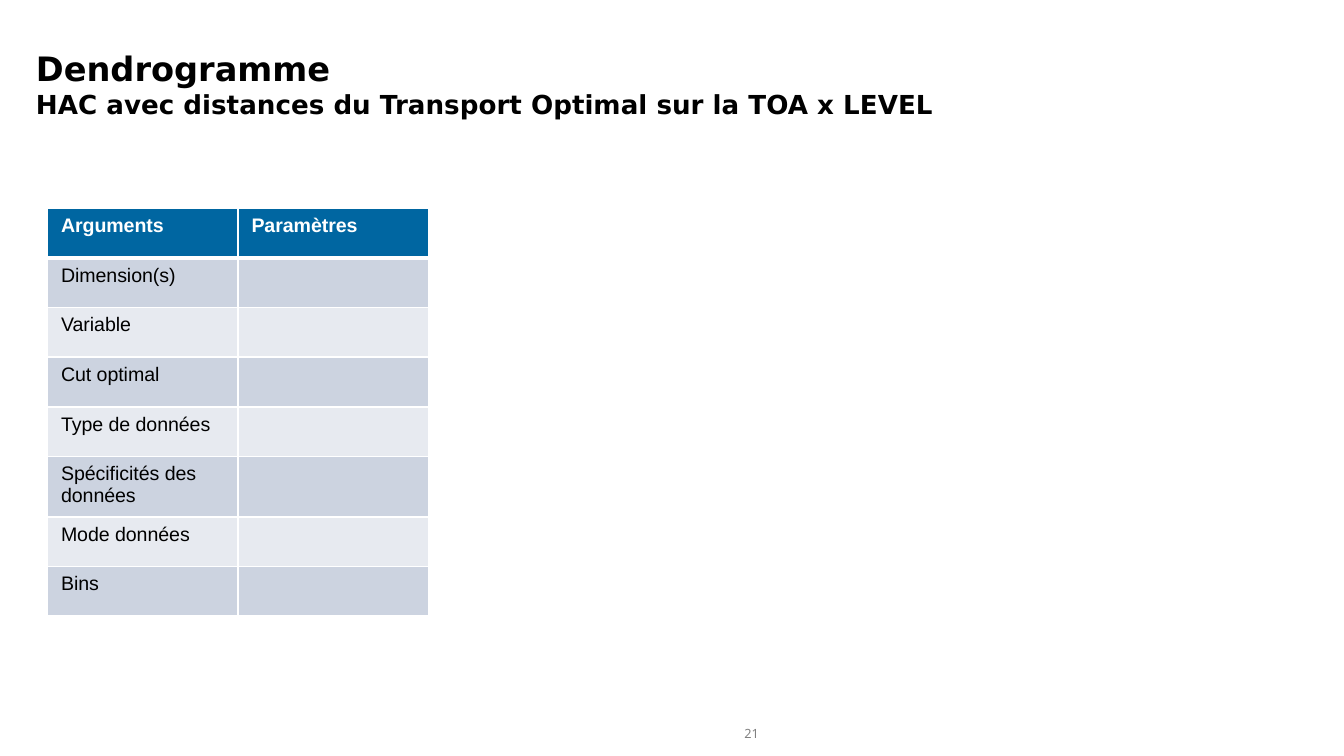
from lxml.etree import SubElement
from pptx import Presentation
from pptx.dml.color import RGBColor
from pptx.enum.text import MSO_ANCHOR, PP_ALIGN
from pptx.oxml.ns import qn
from pptx.util import Cm, Pt

BLACK = RGBColor(0x00, 0x00, 0x00)
WHITE = RGBColor(0xFF, 0xFF, 0xFF)
GREY = RGBColor(0x81, 0x81, 0x81)
BLUE = RGBColor(0x00, 0x66, 0xA1)
DARK_BAND = RGBColor(0xCC, 0xD3, 0xE0)
LIGHT_BAND = RGBColor(0xE7, 0xEA, 0xF0)

TITLE = {"name": "DejaVu Sans", "size": Pt(18), "bold": True}
SUBTITLE = {**TITLE, "size": Pt(14)}
BODY = {"name": "Arial", "size": Pt(10.5), "bold": False}
HEADER = {**BODY, "bold": True}
NUMBER = {"name": "Noto Sans", "size": Pt(6.8), "bold": False}

ARGUMENTS = [
    "Dimension(s)",
    "Variable",
    "Cut optimal",
    "Type de données",
    "Spécificités des données",
    "Mode données",
    "Bins",
]


def write(para, text, style, color):
    if text:
        para.add_run().text = text
    for font in [para.font] + [span.font for span in para.runs]:
        for key, value in style.items():
            setattr(font, key, value)
        font.color.rgb = color


def add_frame(page, box, anchor):
    frame = page.shapes.add_textbox(*map(Cm, box)).text_frame
    frame.word_wrap = True
    frame.vertical_anchor = anchor
    return frame


def add_heading(page, box, title, subtitle):
    frame = add_frame(page, box, MSO_ANCHOR.TOP)
    write(frame.paragraphs[0], title, TITLE, BLACK)
    write(frame.add_paragraph(), subtitle, SUBTITLE, BLACK)


def add_page_number(page, box, number):
    para = add_frame(page, box, MSO_ANCHOR.MIDDLE).paragraphs[0]
    para.alignment = PP_ALIGN.CENTER
    write(para, number, NUMBER, GREY)


def add_borders(cell, widths):
    properties = cell._tc.get_or_add_tcPr()
    for side, width in widths.items():
        line = SubElement(properties, qn(f"a:ln{side}"), w=str(Pt(width)))
        fill = SubElement(line, qn("a:solidFill"))
        SubElement(fill, qn("a:srgbClr"), val=str(WHITE))


def add_parameter_table(page, box, header, arguments):
    rows = [header] + [(argument, "") for argument in arguments]
    table = page.shapes.add_table(len(rows), len(header), *map(Cm, box)).table
    for row, texts in enumerate(rows):
        is_header = row == 0
        band = DARK_BAND if row % 2 else LIGHT_BAND
        widths = {"L": 1, "R": 1, "T": 3 if row == 1 else 1, "B": 3 if is_header else 1}
        for column, text in enumerate(texts):
            cell = table.cell(row, column)
            add_borders(cell, widths)
            cell.fill.solid()
            cell.fill.fore_color.rgb = BLUE if is_header else band
            write(
                cell.text_frame.paragraphs[0],
                text,
                HEADER if is_header else BODY,
                WHITE if is_header else BLACK,
            )


def main():
    deck = Presentation()
    deck.slide_width, deck.slide_height = Cm(25.4), Cm(14.29)
    page = deck.slides.add_slide(deck.slide_layouts[6])
    add_page_number(page, (13.34, 13.61, 1.73, 0.51), "21")
    add_heading(
        page,
        (0.43, 0.79, 21.29, 1.57),
        "Dendrogramme",
        "HAC avec distances du Transport Optimal sur la TOA x LEVEL",
    )
    add_parameter_table(
        page, (0.9, 3.94, 7.2, 7.5), ("Arguments", "Paramètres"), ARGUMENTS
    )
    deck.save("out.pptx")


if __name__ == "__main__":
    main()
